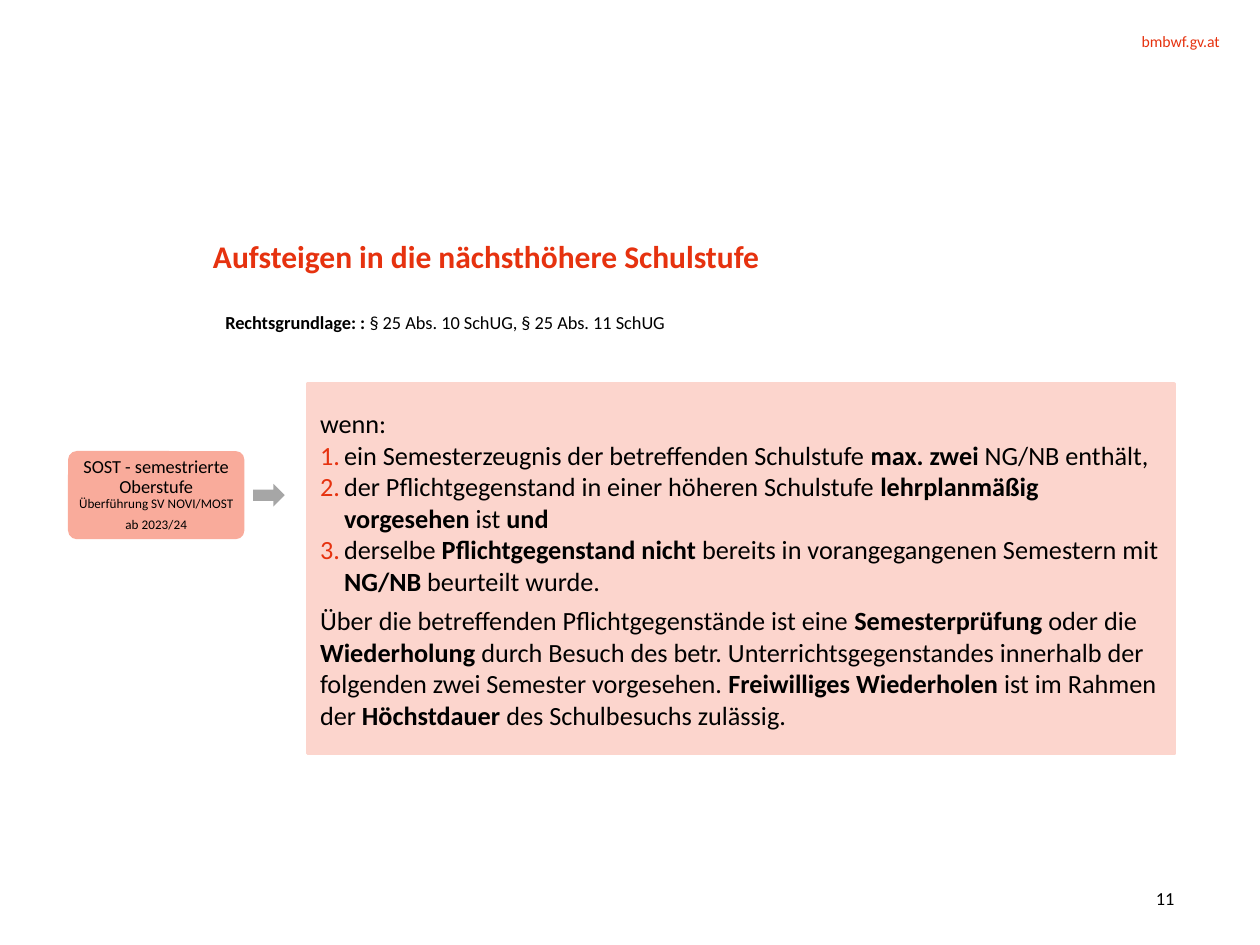
from dataclasses import dataclass

from pptx import Presentation
from pptx.dml.color import RGBColor
from pptx.enum import shapes, text
from pptx.oxml import ns
from pptx.util import Inches, Pt
from lxml import etree


@dataclass(frozen=True)
class Theme:
    """Colours, font and type sizes of the deck."""
    font: str = "Calibri"
    accent: str = "E6320F"
    ink: str = "000000"
    panel: str = "FCD5CD"
    label: str = "F9AB9B"
    arrow: str = "A6A6A6"
    title: float = 18
    body: float = 15
    note: float = 10.5
    address: float = 9
    small: float = 7.5


THEME = Theme()
CONDITIONS = [
    "ein Semesterzeugnis der betreffenden Schulstufe *max. zwei* NG/NB enthält,",
    "der Pflichtgegenstand in einer höheren Schulstufe *lehrplanmäßig vorgesehen* ist *und*",
    "derselbe *Pflichtgegenstand nicht *bereits in vorangegangenen Semestern mit *NG/NB* beurteilt wurde.",
]
OUTCOME = (
    "Über die betreffenden Pflichtgegenstände ist eine *Semesterprüfung* oder die *Wiederholung* "
    "durch Besuch des betr. Unterrichtsgegenstandes innerhalb der folgenden zwei Semester vorgesehen. "
    "*Freiwilliges Wiederholen *ist im Rahmen der *Höchstdauer* des Schulbesuchs zulässig."
)


def colour(code):
    """Turn a hex code into a colour."""
    return RGBColor.from_string(code)


def place(shape, box):
    """Move a shape to a box given in inches."""
    shape.left, shape.top, shape.width, shape.height = map(Inches, box)


def set_frame(shape, inset=None, anchor=text.MSO_ANCHOR.TOP):
    """Prepare a wrapping text frame and return it."""
    frame = shape.text_frame
    frame.word_wrap = True
    frame.auto_size = text.MSO_AUTO_SIZE.NONE
    frame.vertical_anchor = anchor
    if inset is not None:
        frame.margin_left = frame.margin_right = Inches(inset)
        frame.margin_top = frame.margin_bottom = Inches(inset)
    return frame


def set_font(para, size, ink=THEME.ink, align=text.PP_ALIGN.LEFT):
    """Set the font and alignment of a whole paragraph."""
    para.alignment = align
    para.font.name = THEME.font
    para.font.size = Pt(size)
    para.font.color.rgb = colour(ink)


def write(para, marked):
    """Write text whose bold parts stand between asterisks."""
    for index, part in enumerate(marked.split("*")):
        if part:
            span = para.add_run()
            span.text = part
            span.font.bold = index % 2 == 1


def set_bullet(para, numbered):
    """Number a paragraph, or clear its bullet and indent."""
    props = para._p.get_or_add_pPr()
    indent = Inches(0.19) if numbered else 0
    props.set("marL", str(indent))
    props.set("indent", str(-indent))
    if numbered:
        tint = etree.SubElement(props, ns.qn("a:buClr"))
        etree.SubElement(tint, ns.qn("a:srgbClr"), val=THEME.accent)
        etree.SubElement(props, ns.qn("a:buFont"), typeface=THEME.font)
        etree.SubElement(props, ns.qn("a:buAutoNum"), type="arabicPeriod")
    else:
        etree.SubElement(props, ns.qn("a:buNone"))


def add_line(page, box, marked, size, ink=THEME.ink, align=text.PP_ALIGN.LEFT,
             inset=0, anchor=text.MSO_ANCHOR.TOP):
    """Add a text box with one paragraph."""
    shape = page.shapes.add_textbox(*map(Inches, box))
    para = set_frame(shape, inset, anchor).paragraphs[0]
    set_font(para, size, ink, align)
    write(para, marked)


def add_block(page, kind, box, fill):
    """Add a plain filled shape without line or shadow."""
    shape = page.shapes.add_shape(kind, *map(Inches, box))
    shape.shadow.inherit = False
    shape.fill.solid()
    shape.fill.fore_color.rgb = colour(fill)
    shape.line.fill.background()
    return shape


def fill_title(page, box):
    """Place the slide title."""
    place(page.shapes.title, box)
    para = set_frame(page.shapes.title, 0).paragraphs[0]
    set_font(para, THEME.title, THEME.accent)
    para.font.bold = True
    para.line_spacing = Pt(22.5)
    write(para, "*Aufsteigen in die nächsthöhere Schulstufe*")


def fill_panel(page, box):
    """Place the panel with the numbered conditions."""
    panel = page.placeholders[1]
    place(panel, box)
    panel.fill.solid()
    panel.fill.fore_color.rgb = colour(THEME.panel)
    panel.line.color.rgb = colour(THEME.panel)
    panel.line.width = Pt(2.08)
    frame = set_frame(panel, anchor=text.MSO_ANCHOR.MIDDLE)
    for index, marked in enumerate(["wenn:", *CONDITIONS, OUTCOME]):
        para = frame.add_paragraph() if index else frame.paragraphs[0]
        set_bullet(para, marked in CONDITIONS)
        para.space_before = Pt(0)
        para.space_after = Pt(4.5 if marked == CONDITIONS[-1] else 0)
        set_font(para, THEME.body)
        write(para, marked)


def add_label(page, box):
    """Add the rounded label naming the school model."""
    label = add_block(page, shapes.MSO_SHAPE.ROUNDED_RECTANGLE, box, THEME.label)
    label.adjustments[0] = 0.1
    frame = set_frame(label, 0.01, text.MSO_ANCHOR.MIDDLE)
    heading, period = frame.paragraphs[0], frame.add_paragraph()
    for para, size in ((heading, THEME.note), (period, THEME.small)):
        para.line_spacing = 0.9
        after = etree.SubElement(para._p.get_or_add_pPr(), ns.qn("a:spcAft"))
        etree.SubElement(after, ns.qn("a:spcPct"), val="35000")
        set_font(para, size, align=text.PP_ALIGN.CENTER)
    write(heading, "SOST - semestrierte Oberstufe")
    heading.add_line_break()
    write(heading, "Überführung SV NOVI/MOST")
    heading.runs[-1].font.size = Pt(THEME.small)
    write(period, "ab 2023/24")


def main():
    """Build the slide and save the deck."""
    deck = Presentation()
    deck.slide_width, deck.slide_height = Inches(10), Inches(7.5)
    page = deck.slides.add_slide(deck.slide_layouts[1])
    right = text.PP_ALIGN.RIGHT
    add_line(page, (7.27, 0.25, 2.41, 0.15), "bmbwf.gv.at", THEME.address, THEME.accent, right)
    fill_title(page, (1.69, 1.87, 6.54, 0.68))
    add_line(page, (1.69, 2.37, 3.87, 0.5),
             "*Rechtsgrundlage: : *§ 25 Abs. 10 SchUG, § 25 Abs. 11 SchUG", THEME.note, inset=0.1)
    fill_panel(page, (2.44, 3.05, 6.88, 2.93))
    add_block(page, shapes.MSO_SHAPE.RIGHT_ARROW, (2.01, 3.84, 0.25, 0.18), THEME.arrow)
    add_label(page, (0.54, 3.58, 1.4, 0.7))
    add_line(page, (8.43, 6.98, 0.89, 0.29), "11", THEME.note, align=right,
             anchor=text.MSO_ANCHOR.MIDDLE)
    deck.save("out.pptx")


if __name__ == "__main__":
    main()
